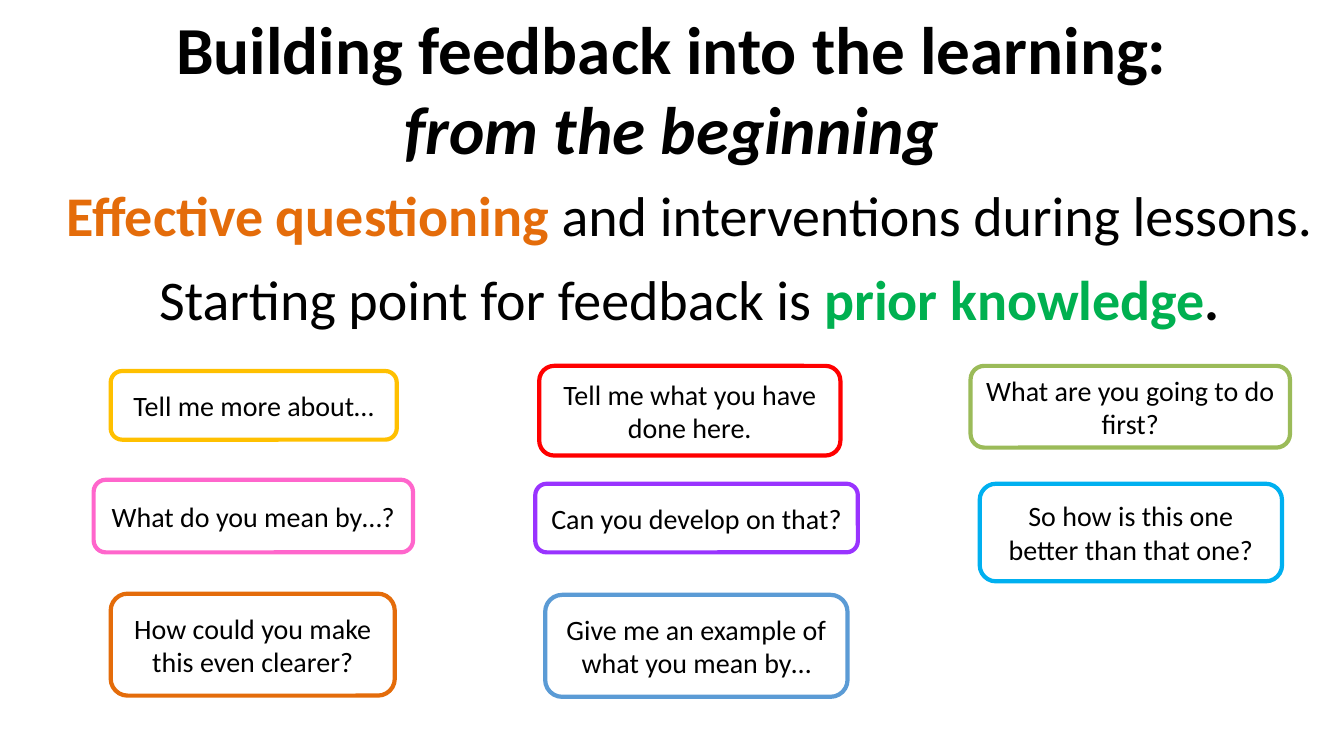
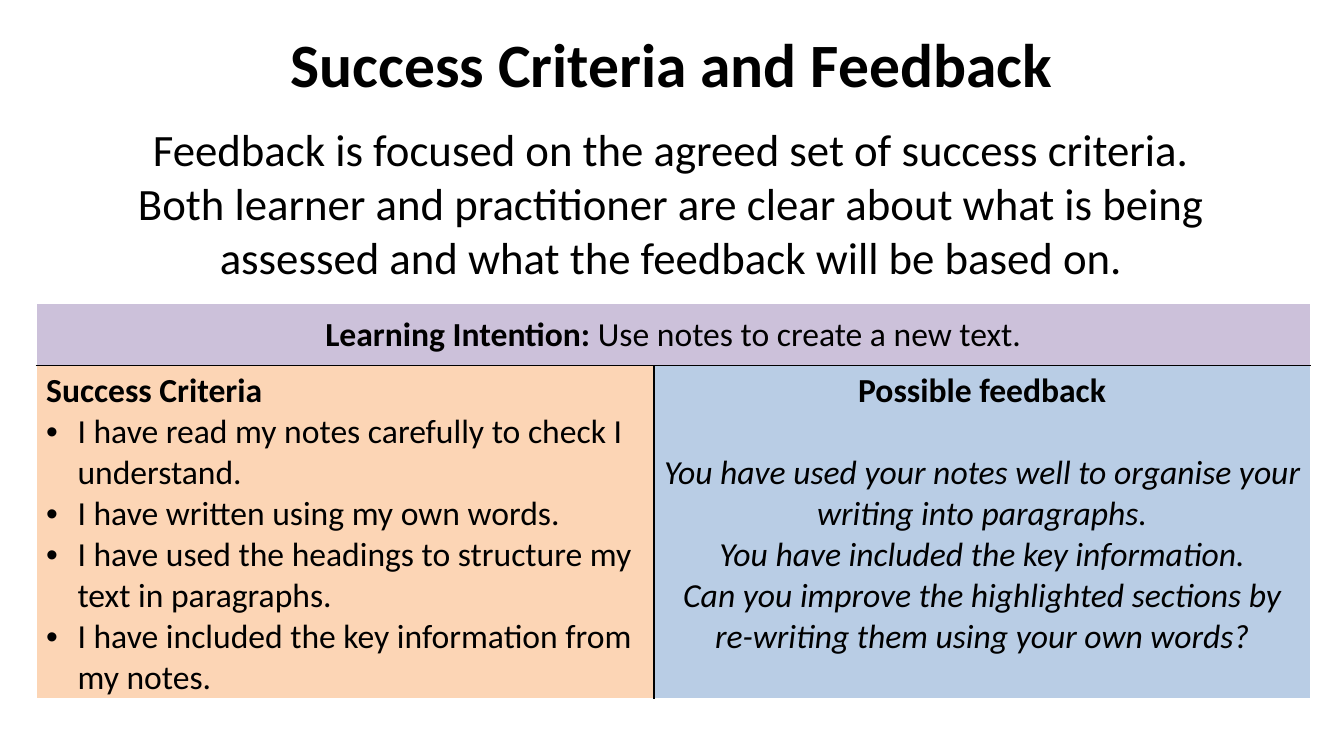
from lxml.etree import SubElement
from pptx import Presentation
from pptx.dml.color import RGBColor
from pptx.enum.shapes import MSO_SHAPE
from pptx.enum.text import MSO_ANCHOR, PP_ALIGN
from pptx.oxml.ns import qn
from pptx.util import Cm, Pt

BLACK = RGBColor(0x00, 0x00, 0x00)
WHITE = RGBColor(0xFF, 0xFF, 0xFF)
ORANGE = RGBColor(0xE4, 0x6C, 0x0A)
GREEN = RGBColor(0x00, 0xB0, 0x50)
AMBER = RGBColor(0xFF, 0xC0, 0x00)
RED = RGBColor(0xFF, 0x00, 0x00)
OLIVE = RGBColor(0x9B, 0xBB, 0x59)
PINK = RGBColor(0xFF, 0x66, 0xCC)
PURPLE = RGBColor(0x99, 0x33, 0xFF)
CYAN = RGBColor(0x00, 0xB0, 0xF0)
BLUE = RGBColor(0x5B, 0x9B, 0xD5)
LILAC = RGBColor(0xCC, 0xC1, 0xDA)
PEACH = RGBColor(0xFC, 0xD5, 0xB5)
PALE_BLUE = RGBColor(0xB9, 0xCD, 0xE5)

FONT = "Calibri"
BOLD = {"bold": True}
ITALIC = {"italic": True}
CENTRED = {"alignment": PP_ALIGN.CENTER}
SPACED = {**CENTRED, "space_after": Pt(12)}
SLIDE_WIDTH = Cm(33.87)


def write_text(text_frame, size, paragraphs):
    text_frame.word_wrap = True
    for index, (layout, runs) in enumerate(paragraphs):
        paragraph = text_frame.paragraphs[0] if index == 0 else text_frame.add_paragraph()
        layout = dict(layout)
        if layout.pop("bullet", False):
            properties = paragraph._p.get_or_add_pPr()
            properties.set("marL", str(Cm(0.79)))
            properties.set("indent", str(-Cm(0.79)))
            SubElement(properties, qn("a:buFont")).set("typeface", "Arial")
            SubElement(properties, qn("a:buChar")).set("char", "•")
        for name, value in layout.items():
            setattr(paragraph, name, value)
        for text, style, color in runs:
            run = paragraph.add_run()
            run.text = text
            for name, value in {"name": FONT, "size": Pt(size), **style}.items():
                setattr(run.font, name, value)
            run.font.color.rgb = color


def add_text(slide, left, top, width, height, size, paragraphs):
    box = slide.shapes.add_textbox(left, top, width, height)
    write_text(box.text_frame, size, paragraphs)


presentation = Presentation()
presentation.slide_width = SLIDE_WIDTH
presentation.slide_height = Cm(19.05)
blank_layout = presentation.slide_layouts[6]

slide = presentation.slides.add_slide(blank_layout)
add_text(slide, 0, Cm(0.05), SLIDE_WIDTH, Cm(4.37), 48, [
    (CENTRED, [("Building feedback into the learning:", BOLD, BLACK)]),
    (CENTRED, [("from the beginning", {**BOLD, **ITALIC}, BLACK)]),
])
add_text(slide, Cm(0.89), Cm(4.42), Cm(32.97), Cm(4.11), 40, [
    (SPACED, [("Effective questioning ", BOLD, ORANGE),
              ("and interventions during lessons.", {}, BLACK)]),
    (SPACED, [("Starting point for feedback is ", {}, BLACK),
              ("prior knowledge", BOLD, GREEN), (".", BOLD, BLACK)]),
])

questions = [
    ("Tell me more about…", AMBER, 2.79, 9.35, 7.21, 1.73),
    ("Tell me what you have done here.", RED, 13.59, 9.22, 7.59, 2.26),
    ("What are you going to do first?", OLIVE, 24.46, 9.22, 8.05, 2.06),
    ("What do you mean by…?", PINK, 2.36, 12.09, 8.05, 1.83),
    ("Can you develop on that?", PURPLE, 13.49, 12.19, 8.13, 1.73),
    ("So how is this one better than that one?", CYAN, 24.69, 12.19, 7.62, 2.46),
    ("How could you make this even clearer?", ORANGE, 2.79, 14.96, 7.16, 2.57),
    ("Give me an example of what you mean by…", BLUE, 13.74, 14.99, 7.62, 2.57),
]
for question, color, *place in questions:
    shape = slide.shapes.add_shape(MSO_SHAPE.ROUNDED_RECTANGLE, *map(Cm, place))
    shape.shadow.inherit = False
    shape.fill.background()
    shape.line.color.rgb = color
    shape.line.width = Pt(3)
    shape.text_frame.vertical_anchor = MSO_ANCHOR.MIDDLE
    write_text(shape.text_frame, 20, [(CENTRED, [(question, {}, BLACK)])])

slide = presentation.slides.add_slide(blank_layout)
add_text(slide, 0, Cm(0.74), SLIDE_WIDTH, Cm(2.24), 44, [
    ({**CENTRED, "line_spacing": 0.9}, [("Success Criteria and Feedback", BOLD, BLACK)]),
])
add_text(slide, Cm(1.4), Cm(2.95), Cm(31.04), Cm(4.37), 32, [
    (CENTRED, [(sentence, {}, BLACK)]) for sentence in [
        "Feedback is focused on the agreed set of success criteria.",
        "Both learner and practitioner are clear about what is being assessed "
        "and what the feedback will be based on.",
    ]
])

criteria = [
    "I have read my notes carefully to check I understand.",
    "I have written using my own words.",
    "I have used the headings to structure my text in paragraphs.",
    "I have included the key information from my notes.",
]
feedback = [
    "You have used your notes well to organise your writing into paragraphs.",
    "You have included the key information.",
    "Can you improve the highlighted sections by re-writing them using your own words?",
]
intention_text = [(CENTRED, [("Learning Intention: ", BOLD, BLACK),
                             ("Use notes to create a new text.", {}, BLACK)])]
criteria_text = [({}, [("Success Criteria", BOLD, BLACK)])]
criteria_text += [({"bullet": True}, [(text, {}, BLACK)]) for text in criteria]
feedback_text = [({**CENTRED, "space_after": Pt(29)}, [("Possible feedback", BOLD, BLACK)])]
feedback_text += [(CENTRED, [(text, ITALIC, BLACK)]) for text in feedback]

table = slide.shapes.add_table(2, 2, Cm(0.91), Cm(7.65), Cm(32.11), Cm(9.96)).table
table.first_row = False
table.horz_banding = False
for column, width in zip(table.columns, [15.57, 16.54]):
    column.width = Cm(width)
for row, height in zip(table.rows, [1.57, 8.39]):
    row.height = Cm(height)
table.cell(0, 0).merge(table.cell(0, 1))

cells = [
    (0, 0, LILAC, intention_text, {"lnB": BLACK}),
    (0, 1, LILAC, [], {"lnB": BLACK}),
    (1, 0, PEACH, criteria_text, {"lnT": BLACK, "lnR": BLACK}),
    (1, 1, PALE_BLUE, feedback_text, {"lnT": BLACK, "lnL": BLACK}),
]
for row, column, fill, paragraphs, dark_edges in cells:
    cell = table.cell(row, column)
    cell.vertical_anchor = MSO_ANCHOR.TOP if row else MSO_ANCHOR.MIDDLE
    if row:
        cell.margin_bottom = 0
    properties = cell._tc.get_or_add_tcPr()
    for edge in ["lnL", "lnR", "lnT", "lnB"]:
        line = SubElement(properties, qn(f"a:{edge}"), w=str(Pt(1)))
        line_fill = SubElement(line, qn("a:solidFill"))
        SubElement(line_fill, qn("a:srgbClr"), val=str(dark_edges.get(edge, WHITE)))
    cell.fill.solid()
    cell.fill.fore_color.rgb = fill
    write_text(cell.text_frame, 24, paragraphs)

presentation.save("out.pptx")
